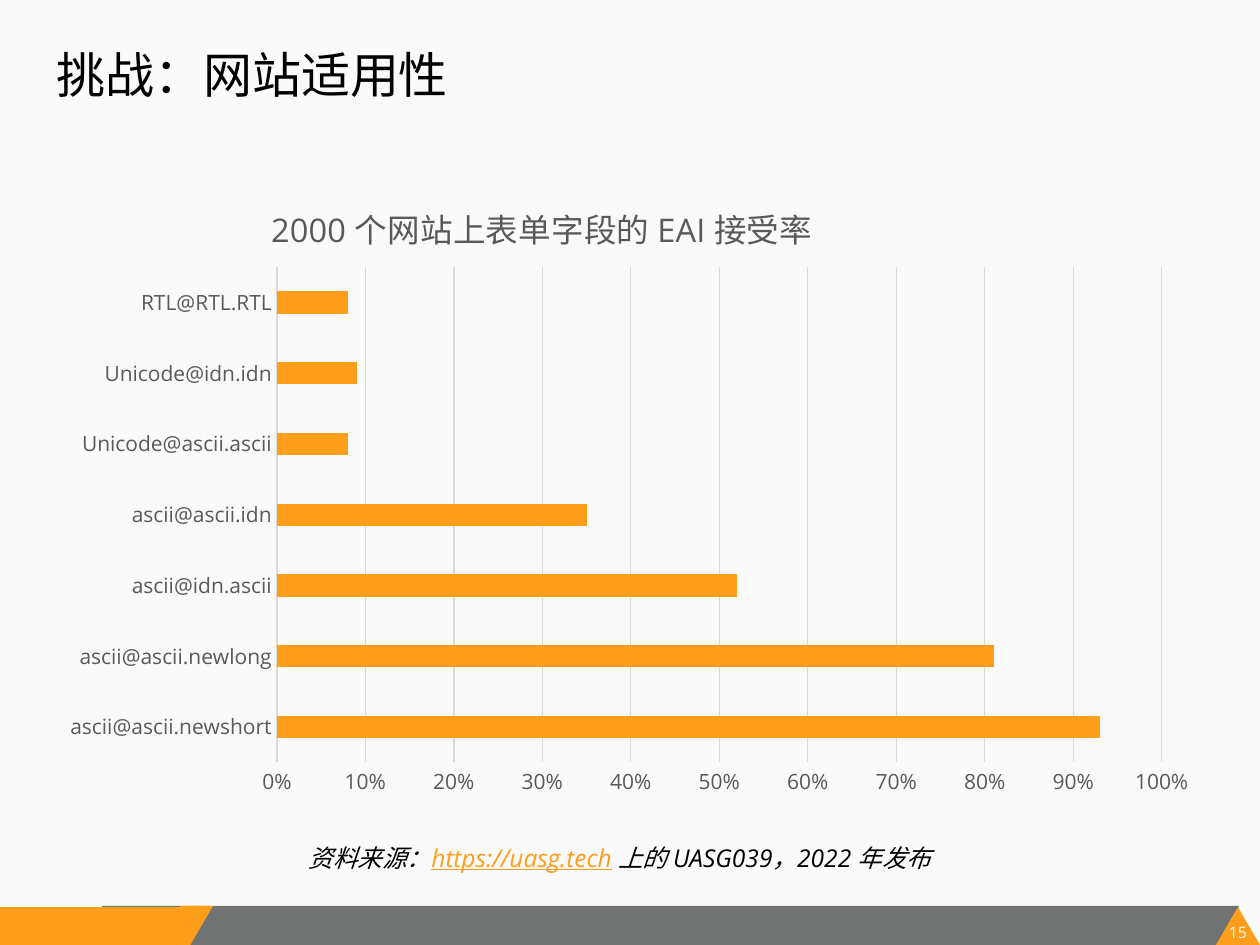
from dataclasses import dataclass

from lxml import etree
from pptx import Presentation
from pptx.chart.data import CategoryChartData
from pptx.dml.color import RGBColor
from pptx.enum.chart import XL_CHART_TYPE, XL_TICK_MARK
from pptx.enum.shapes import MSO_SHAPE
from pptx.enum.text import MSO_ANCHOR, PP_ALIGN
from pptx.oxml import parse_xml
from pptx.oxml.ns import nsdecls, qn
from pptx.util import Inches, Pt

BAR_CLUSTERED = XL_CHART_TYPE.BAR_CLUSTERED
NO_TICK = XL_TICK_MARK.NONE
RECTANGLE = MSO_SHAPE.RECTANGLE
TRIANGLE = MSO_SHAPE.ISOSCELES_TRIANGLE
PARALLELOGRAM = MSO_SHAPE.PARALLELOGRAM
TOP = MSO_ANCHOR.TOP
LEFT, CENTER = PP_ALIGN.LEFT, PP_ALIGN.CENTER


@dataclass(frozen=True)
class Theme:
    paper: RGBColor = RGBColor.from_string("FAFAFA")
    ink: RGBColor = RGBColor.from_string("000000")
    label: RGBColor = RGBColor.from_string("595959")
    grid: RGBColor = RGBColor.from_string("D9D9D9")
    band: RGBColor = RGBColor.from_string("707372")
    accent: RGBColor = RGBColor.from_string("FF9E1B")
    heading_font: str = "Noto Sans CJK SC"
    body_font: str = "Open Sans"
    heading_size: float = 28
    chart_title_size: float = 18.6
    source_size: float = 14
    axis_size: float = 12
    page_size: float = 9
    hairline: float = 0.75


theme = Theme()


def write(paragraph, text, *, size, color=theme.ink, font=theme.body_font,
          italic=False, underline=False, align=LEFT):
    paragraph.alignment = align
    run = paragraph.add_run()
    run.text = text
    run.font.size = Pt(size)
    run.font.color.rgb = color
    run.font.bold = False
    run.font.italic = italic
    run.font.underline = underline
    run.font.name = font
    east_asian = etree.Element(qn("a:ea"), typeface=theme.heading_font)
    run.font._element.find(qn("a:latin")).addnext(east_asian)


def add_text_area(left, top, width, height, margins=(0.1, 0.05)):
    area = slide.shapes.add_textbox(Inches(left), Inches(top), Inches(width), Inches(height))
    frame = area.text_frame
    frame.word_wrap = True
    frame.vertical_anchor = TOP
    frame.margin_left = frame.margin_right = Inches(margins[0])
    frame.margin_top = frame.margin_bottom = Inches(margins[1])
    return frame.paragraphs[0]


deck = Presentation()
deck.slide_width = Inches(10)
deck.slide_height = Inches(7.5)
slide = deck.slides.add_slide(deck.slide_layouts[6])
slide.background.fill.solid()
slide.background.fill.fore_color.rgb = theme.paper

footer_parts = [
    (RECTANGLE, 0.81, 7.19, 9.02, 0.31, theme.band, None),
    (RECTANGLE, 0, 7.2, 1.5, 0.3, theme.accent, None),
    (TRIANGLE, 9.65, 7.2, 0.35, 0.3, theme.accent, 0.5),
    (PARALLELOGRAM, 1.34, 7.19, 0.35, 0.31, theme.accent, 0.58),
    (RECTANGLE, 1.43, 7.19, 0.14, 0.13, theme.accent, None),
]
for kind, left, top, width, height, color, slant in footer_parts:
    footer = slide.shapes.add_shape(kind, Inches(left), Inches(top), Inches(width), Inches(height))
    footer.shadow.inherit = False
    footer.fill.solid()
    footer.fill.fore_color.rgb = color
    footer.line.fill.background()
    if slant is not None:
        footer.adjustments[0] = slant

page_number = add_text_area(9.74, 7.32, 0.17, 0.15, margins=(0, 0))
write(page_number, "15", size=theme.page_size, color=theme.paper, align=CENTER)

heading = add_text_area(0.35, 0.3, 9.24, 1.25)
write(heading, "挑战：网站适用性", size=theme.heading_size, font=theme.heading_font)

acceptance = {
    "ascii@ascii.newshort": 0.93,
    "ascii@ascii.newlong": 0.81,
    "ascii@idn.ascii": 0.52,
    "ascii@ascii.idn": 0.35,
    "Unicode@ascii.ascii": 0.08,
    "Unicode@idn.idn": 0.09,
    "RTL@RTL.RTL": 0.08,
}
rates = CategoryChartData(number_format="0%")
rates.categories = list(acceptance)
rates.add_series("Series 1", list(acceptance.values()))
chart = slide.shapes.add_chart(
    BAR_CLUSTERED, Inches(0.35), Inches(1.39), Inches(9.24), Inches(5.04), rates).chart
chart.has_legend = False
chart.font.name = theme.body_font
chart.font.size = Pt(theme.axis_size)
chart.font.color.rgb = theme.label
chart.has_title = True
chart.chart_title.include_in_layout = False
write(chart.chart_title.text_frame.paragraphs[0], "2000 个网站上表单字段的 EAI 接受率",
      size=theme.chart_title_size, color=theme.label, align=CENTER)

bars = chart.plots[0]
bars.gap_width = 219
bars.vary_by_categories = False
bars.series[0].format.fill.solid()
bars.series[0].format.fill.fore_color.rgb = theme.accent

address_axis, rate_axis = chart.category_axis, chart.value_axis
for axis in (address_axis, rate_axis):
    axis.major_tick_mark = axis.minor_tick_mark = NO_TICK
    axis.tick_labels.font.name = theme.body_font
    axis.tick_labels.font.size = Pt(theme.axis_size)
    axis.tick_labels.font.color.rgb = theme.label
rate_axis.minimum_scale = 0
rate_axis.maximum_scale = 1
rate_axis.major_unit = 0.1
rate_axis.tick_labels.number_format = "0%"
rate_axis.tick_labels.number_format_is_linked = False
rate_axis.format.line.fill.background()
rate_axis.has_major_gridlines = True
for line in (address_axis.format.line, rate_axis.major_gridlines.format.line):
    line.color.rgb = theme.grid
    line.width = Pt(theme.hairline)

chart_root = chart._chartSpace.chart
title_node = chart_root.find(qn("c:title"))
plot_node = chart_root.find(qn("c:plotArea"))
placements = [
    (title_node, 1, "", {"x": 0.19, "y": 0.03}),
    (plot_node, 0, '<c:layoutTarget val="inner"/>', {"x": 0.2, "y": 0.145, "w": 0.76, "h": 0.78}),
]
for node, position, target, fractions in placements:
    for automatic in node.findall(qn("c:layout")):
        node.remove(automatic)
    modes = "".join(f'<c:{key}Mode val="edge"/>' for key in "xy")
    values = "".join(f'<c:{key} val="{value}"/>' for key, value in fractions.items())
    node.insert(position, parse_xml(
        f'<c:layout {nsdecls("c")}><c:manualLayout>{target}{modes}{values}'
        '</c:manualLayout></c:layout>'))

source = add_text_area(2.35, 6.64, 7.35, 0.34)
write(source, "资料来源：", size=theme.source_size, italic=True)
write(source, "https://uasg.tech", size=theme.source_size, color=theme.accent,
      italic=True, underline=True)
write(source, " 上的 UASG039，2022 年发布", size=theme.source_size, italic=True)

deck.save("out.pptx")
